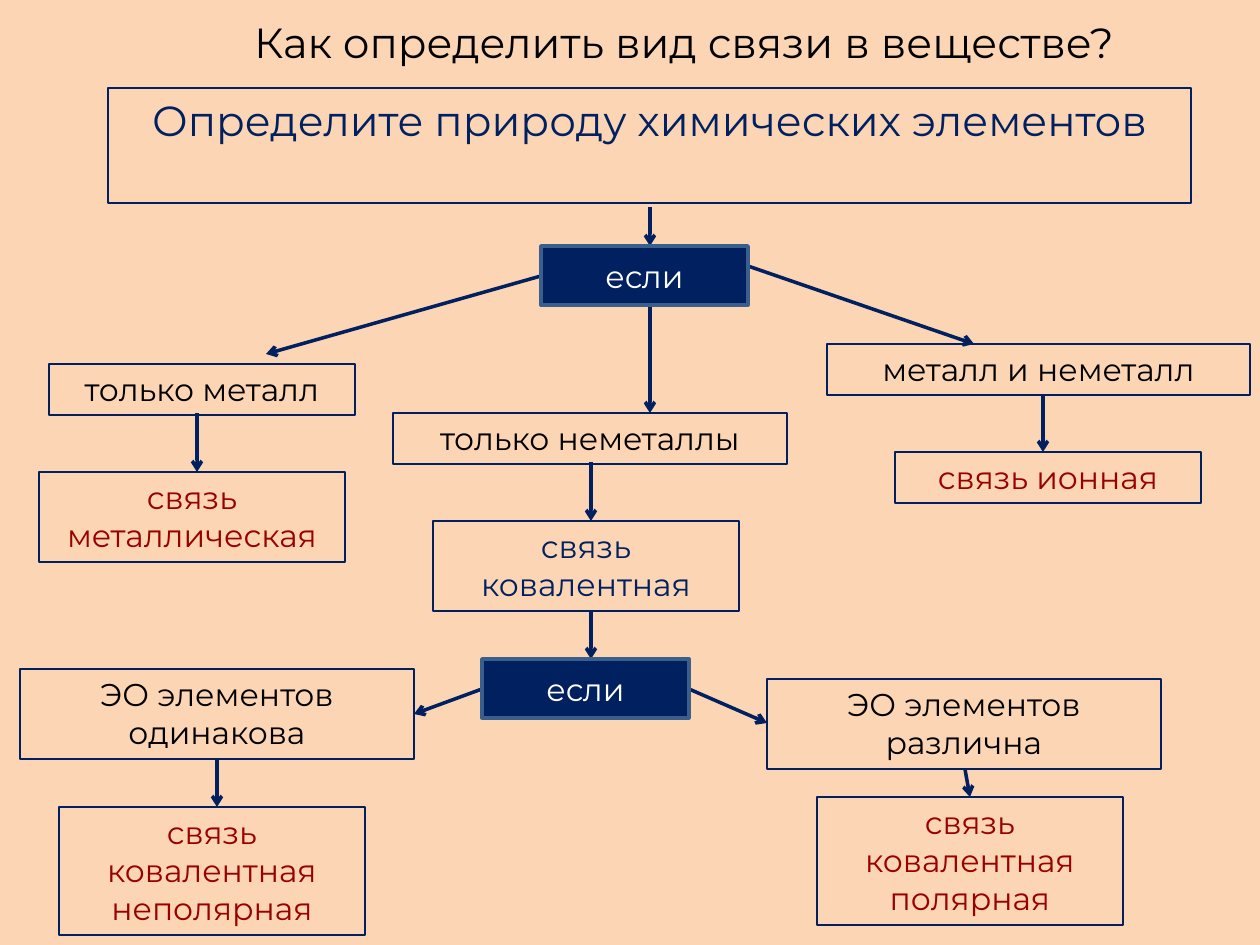
import pptx
import pptx.dml.color
import pptx.enum.shapes
import pptx.enum.text
import pptx.oxml
import pptx.oxml.ns
import pptx.util

PX = 914400 // 126
FONT = "Montserrat"
NAVY, RED, BLACK, WHITE = "002060", "990000", "000000", "FFFFFF"
PEACH, STEEL = "FCD5B5", "3A5F8C"

TITLE = ("Как определить вид связи в веществе?", (197, 10, 974, 64))
HEADING = ("Определите природу химических элементов", (108, 88, 1083, 115))
ONE_LINE, TWO_LINES, THREE_LINES = 51, 90, 128
NARROW, WIDE = 306, 394

OUTLINED_BOXES = [
    ("только металл", (49, 364, NARROW, ONE_LINE), BLACK),
    ("только неметаллы", (393, 413, WIDE, ONE_LINE), BLACK),
    ("металл и неметалл", (827, 344, 423, ONE_LINE), BLACK),
    ("связь металлическая", (39, 472, NARROW, TWO_LINES), RED),
    ("связь ковалентная", (433, 521, NARROW, TWO_LINES), NAVY),
    ("связь ионная", (895, 452, NARROW, ONE_LINE), RED),
    ("ЭО элементов одинакова", (20, 669, WIDE, TWO_LINES), BLACK),
    ("ЭО элементов различна", (767, 679, WIDE, TWO_LINES), BLACK),
    ("связь ковалентная неполярная", (59, 807, NARROW, THREE_LINES), RED),
    ("связь ковалентная полярная", (817, 797, NARROW, THREE_LINES), RED),
]
CONDITIONS = [
    ("если", (541, 246, 207, 59)),
    ("если", (482, 659, 207, 59)),
]
ARROWS = [
    ((650, 207), (650, 246)),
    ((541, 276), (266, 354)),
    ((650, 305), (650, 413)),
    ((748, 266), (974, 344)),
    ((197, 413), (197, 472)),
    ((591, 462), (591, 521)),
    ((1043, 394), (1043, 452)),
    ((591, 610), (591, 659)),
    ((482, 689), (414, 714)),
    ((689, 689), (767, 723)),
    ((217, 759), (217, 807)),
    ((965, 769), (970, 797)),
]


def color(value):
    return pptx.dml.color.RGBColor.from_string(value)


def scale(lengths):
    return [length * PX for length in lengths]


def write_text(shape, text, size=18, text_color=BLACK, middle=False):
    frame = shape.text_frame
    frame.word_wrap = True
    frame.auto_size = pptx.enum.text.MSO_AUTO_SIZE.NONE
    anchors = pptx.enum.text.MSO_ANCHOR
    frame.vertical_anchor = anchors.MIDDLE if middle else anchors.TOP
    paragraph = frame.paragraphs[0]
    paragraph.alignment = pptx.enum.text.PP_ALIGN.CENTER
    run = paragraph.add_run()
    run.text = text
    run.font.name = FONT
    run.font.size = pptx.util.Pt(size)
    run.font.color.rgb = color(text_color)


def add_box(slide, text, place, fill=None, line=NAVY, line_width=1.5, **text_format):
    rectangle = pptx.enum.shapes.MSO_SHAPE.RECTANGLE
    shape = slide.shapes.add_shape(rectangle, *scale(place))
    shape.shadow.inherit = False
    if fill:
        shape.fill.solid()
        shape.fill.fore_color.rgb = color(fill)
    else:
        shape.fill.background()
    shape.line.color.rgb = color(line)
    shape.line.width = pptx.util.Pt(line_width)
    write_text(shape, text, **text_format)


def add_arrow(slide, start, end):
    straight = pptx.enum.shapes.MSO_CONNECTOR.STRAIGHT
    connector = slide.shapes.add_connector(straight, *scale(start + end))
    connector.line.color.rgb = color(NAVY)
    connector.line.width = pptx.util.Pt(2)
    line = connector.line._get_or_add_ln()
    head = pptx.oxml.parse_xml(
        f'<a:tailEnd {pptx.oxml.ns.nsdecls("a")} type="arrow"/>')
    line.append(head)
    effects = pptx.oxml.parse_xml(f'<a:effectLst {pptx.oxml.ns.nsdecls("a")}/>')
    line.addnext(effects)


def main():
    presentation = pptx.Presentation()
    presentation.slide_width = pptx.util.Inches(10)
    presentation.slide_height = pptx.util.Inches(7.5)
    slide = presentation.slides.add_slide(presentation.slide_layouts[5])
    slide.background.fill.solid()
    slide.background.fill.fore_color.rgb = color(PEACH)

    title_text, title_place = TITLE
    title = slide.shapes.title
    title.left, title.top, title.width, title.height = scale(title_place)
    write_text(title, title_text, size=24)

    heading_text, heading_place = HEADING
    add_box(slide, heading_text, heading_place, size=24, text_color=NAVY)
    for start, end in ARROWS:
        add_arrow(slide, start, end)
    for text, place, text_color in OUTLINED_BOXES:
        add_box(slide, text, place, text_color=text_color)
    for text, place in CONDITIONS:
        add_box(slide, text, place, fill=NAVY, line=STEEL, line_width=2,
                text_color=WHITE, middle=True)
    presentation.save("out.pptx")


if __name__ == "__main__":
    main()
